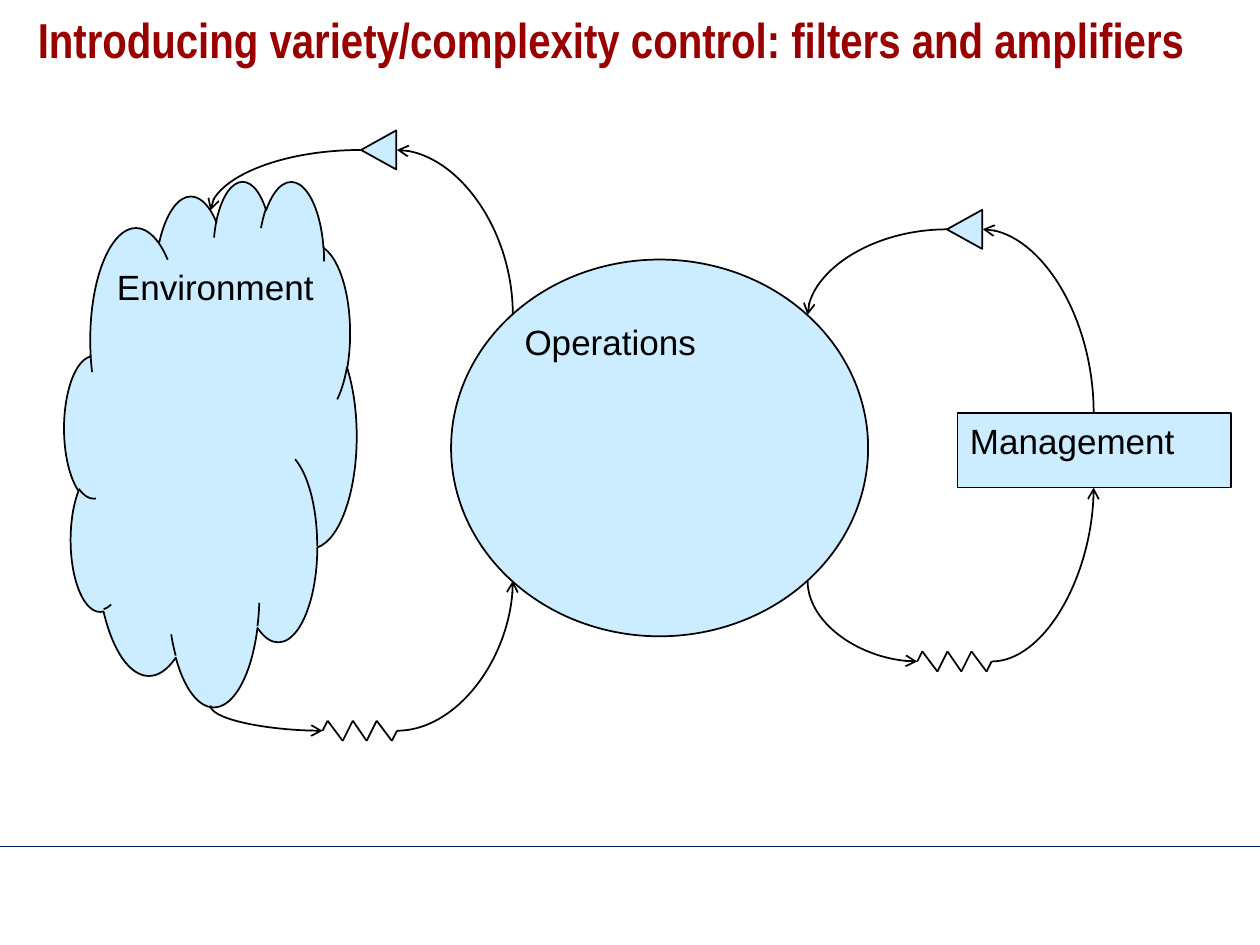
from itertools import pairwise

from lxml import etree
from pptx import Presentation
from pptx.dml.color import RGBColor
from pptx.enum.shapes import MSO_CONNECTOR, MSO_SHAPE
from pptx.enum.text import MSO_ANCHOR, MSO_AUTO_SIZE, PP_ALIGN
from pptx.oxml.ns import qn
from pptx.util import Inches, Pt

STRAIGHT, CURVE = MSO_CONNECTOR.STRAIGHT, MSO_CONNECTOR.CURVE
CLOUD, OVAL = MSO_SHAPE.CLOUD, MSO_SHAPE.OVAL
RECTANGLE, TRIANGLE = MSO_SHAPE.RECTANGLE, MSO_SHAPE.ISOSCELES_TRIANGLE
LEFT, TOP, NO_FIT = PP_ALIGN.LEFT, MSO_ANCHOR.TOP, MSO_AUTO_SIZE.NONE

# Content
TITLE = "Introducing variety/complexity control: filters and amplifiers"
TITLE_BOX = (0.2, 0.08, 9.61, 0.83)
SYSTEMS = [
    (CLOUD, "Environment", (0.51, 1.43, 2.32, 4.17)),
    (OVAL, "Operations", (3.58, 2.06, 3.31, 2.99)),
    (RECTANGLE, "Management", (7.6, 3.28, 2.17, 0.59)),
]
AMPLIFIERS = [(2.85, 1.05), (7.5, 1.68)]
AMPLIFIER_SIZE = (0.31, 0.28)
FILTERS = [(2.56, 5.8), (7.28, 5.25)]
ZIGZAG_X = [0, 0.04, 0.16, 0.24, 0.35, 0.43, 0.55, 0.59]
ZIGZAG_Y = [0, -0.08, 0.08, -0.08, 0.08, -0.08, 0.08, 0]
# Start, end, and whether the curve leaves its start vertically
FLOWS = [
    ((2.87, 1.19), (1.67, 1.67), False),
    ((1.67, 5.6), (2.56, 5.8), True),
    ((7.52, 1.82), (6.41, 2.5), False),
    ((7.87, 5.25), (8.68, 3.87), False),
    ((4.07, 2.5), (3.15, 1.19), True),
    ((8.68, 3.28), (7.8, 1.82), True),
    ((3.15, 5.8), (4.07, 4.61), False),
    ((6.41, 4.61), (7.28, 5.25), True),
]
PALE_BLUE, BLACK, NAVY, DARK_RED = "CCECFF", "000000", "002060", "990000"


def color(value):
    return RGBColor.from_string(value)


def write(box, text, name, size, ink, **formats):
    frame = box.text_frame
    frame.text = text
    frame.vertical_anchor = TOP
    frame.auto_size = NO_FIT
    para = frame.paragraphs[0]
    para.alignment = LEFT
    for key, value in {"name": name, "size": Pt(size), **formats}.items():
        setattr(para.runs[0].font, key, value)
    para.runs[0].font.color.rgb = color(ink)
    return frame, para


def add_box(shapes, kind, place):
    box = shapes.add_shape(kind, *map(Inches, place))
    box.shadow.inherit = False
    box.fill.solid()
    box.fill.fore_color.rgb = color(PALE_BLUE)
    box.line.color.rgb = color(BLACK)
    box.line.width = Pt(1)
    return box


def add_line(shapes, kind, start, end, ink=BLACK, width=1):
    line = shapes.add_connector(kind, *map(Inches, (*start, *end)))
    line.line.color.rgb = color(ink)
    line.line.width = Pt(width)
    etree.SubElement(line._element.spPr, qn("a:effectLst"))
    return line


def add_flow(shapes, start, end, vertical):
    """Draw a quarter curve with an arrowhead; vertical ones are turned 270 degrees."""
    if vertical:
        middle_x, middle_y = ((a + b) / 2 for a, b in zip(start, end))
        start, end = (
            (middle_x - (y - middle_y), middle_y + (x - middle_x))
            for x, y in (start, end)
        )
    flow = add_line(shapes, CURVE, start, end)
    properties = flow._element.spPr
    properties.find(qn("a:prstGeom")).set("prst", "curvedConnector2")
    if vertical:
        properties.find(qn("a:xfrm")).set("rot", str(270 * 60000))
    etree.SubElement(properties.find(qn("a:ln")), qn("a:tailEnd"), type="arrow")


deck = Presentation()
deck.slide_width, deck.slide_height = Inches(10), Inches(7.5)
page = deck.slides.add_slide(deck.slide_layouts[5])
shapes = page.shapes

# Title and footer rule
add_line(shapes, STRAIGHT, (0, 6.72), (10, 6.72), NAVY, 0.75)
title = shapes.title
title.left, title.top, title.width, title.height = map(Inches, TITLE_BOX)
title_para = write(title, TITLE, "Arial Narrow", 28, DARK_RED, bold=True)[1]
title_para.line_spacing = 0.9

# Systems
for kind, label, place in SYSTEMS:
    system = add_box(shapes, kind, place)
    write(system, label, "Arial", 20, BLACK)[0].word_wrap = False

# Amplifiers point left
for corner in AMPLIFIERS:
    add_box(shapes, TRIANGLE, (*corner, *AMPLIFIER_SIZE)).rotation = 270

# Filters are zigzags
for left, middle in FILTERS:
    points = [(left + x, middle + y) for x, y in zip(ZIGZAG_X, ZIGZAG_Y)]
    zigzag = shapes.add_group_shape()
    for start, end in pairwise(points):
        add_line(zigzag.shapes, STRAIGHT, start, end)

# Flows between systems, amplifiers and filters
for start, end, vertical in FLOWS:
    add_flow(shapes, start, end, vertical)

deck.save("out.pptx")
